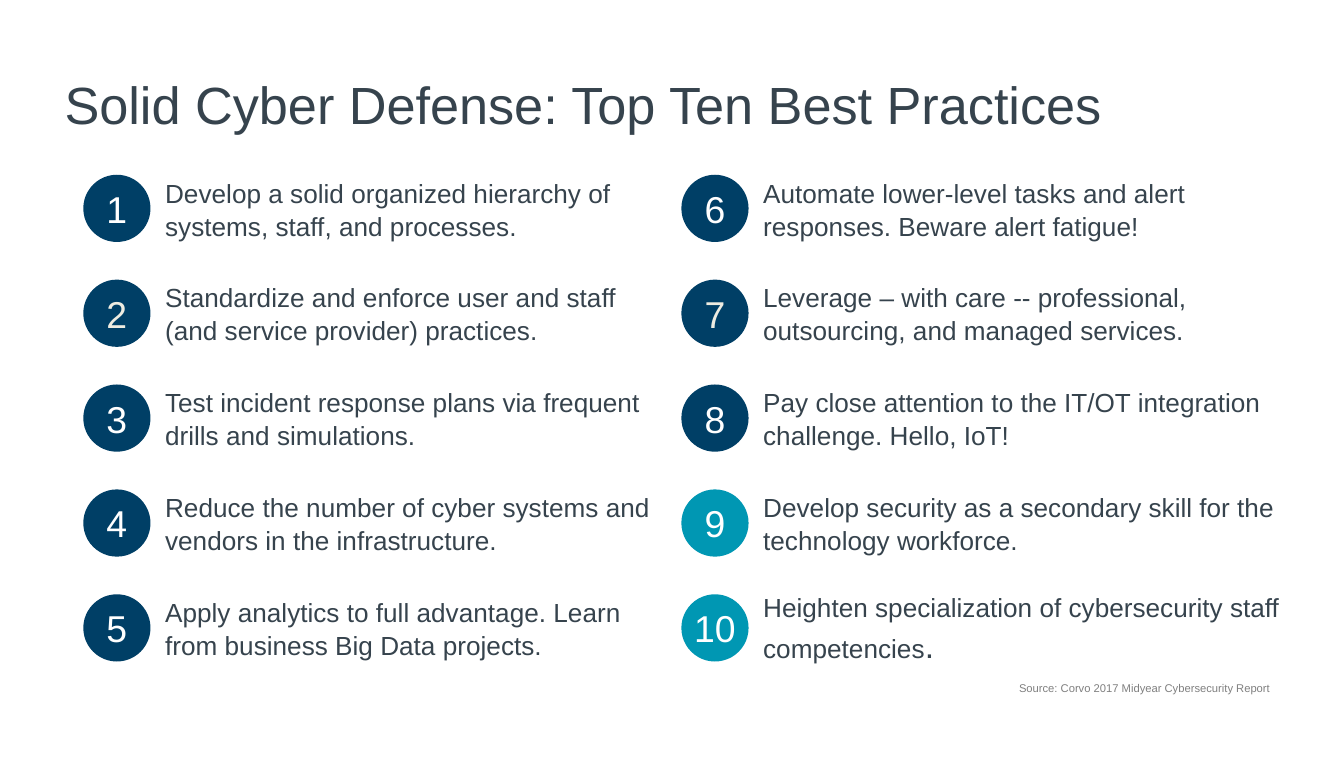
from pptx import Presentation
from pptx.dml.color import RGBColor
from pptx.enum import shapes, text
from pptx.util import Inches, Pt

# Content
TITLE = "Solid Cyber Defense: Top Ten Best Practices"
SOURCE = "Source: Corvo 2017 Midyear Cybersecurity Report "
PRACTICES = [
    "Develop a solid organized hierarchy of systems, staff, and processes.",
    "Standardize and enforce user and staff (and service provider) practices.",
    "Test incident response plans via frequent drills and simulations.",
    "Reduce the number of cyber systems and vendors in the infrastructure.",
    "Apply analytics to full advantage. Learn from business Big Data projects.",
    "Automate lower-level tasks and alert responses. Beware alert fatigue!",
    "Leverage – with care -- professional, outsourcing, and managed services.",
    "Pay close attention to the IT/OT integration challenge. Hello, IoT!",
    "Develop security as a secondary skill for the technology workforce.",
    "Heighten specialization of cybersecurity staff competencies",
]
LARGE_STOP = "."  # closes the last practice in a larger size

# Format
INK, NAVY, TEAL = "36434D", "003F66", "0097B3"
WHITE, CREAM, GREY = "FFFFFF", "EEECE1", "808080"
ROWS = 5
COLUMNS = [(0.62, 3.95), (5.07, 4.12)]  # circle left, text width
FIRST_TOP, ROW_STEP, CIRCLE = 1.3, 0.78, 0.5
MIDDLE, LEFT = text.MSO_ANCHOR.MIDDLE, text.PP_ALIGN.LEFT


def color(hex_string):
    return RGBColor.from_string(hex_string)


def apply(target, values):
    for name, value in values.items():
        setattr(target, name, value)


def add_span(para, words, size, hex_string):
    span = para.add_run()
    span.text = words
    apply(span.font, {"name": "Arial", "size": Pt(size)})
    span.font.color.rgb = color(hex_string)


def write(shape, words, size, hex_string, align=LEFT, anchor=MIDDLE, **frame_values):
    frame = shape.text_frame
    apply(frame, {"word_wrap": True, "vertical_anchor": anchor, **frame_values})
    para = frame.paragraphs[0]
    para.alignment = align
    add_span(para, words, size, hex_string)
    return para


def add_box(page, left, top, width, height):
    return page.shapes.add_textbox(*map(Inches, (left, top, width, height)))


def add_circle(page, number, left, top):
    circle = page.shapes.add_shape(
        shapes.MSO_SHAPE.OVAL, *map(Inches, (left, top, CIRCLE, CIRCLE)))
    circle.shadow.inherit = False
    circle.fill.solid()
    circle.fill.fore_color.rgb = color(TEAL if number > 8 else NAVY)
    circle.line.fill.background()
    write(circle, str(number), 20, CREAM if number in (2, 7) else WHITE,
          text.PP_ALIGN.CENTER, margin_left=0, margin_right=0,
          margin_top=0, margin_bottom=0)


def add_practice(page, number, words, left, top, width):
    last = number == len(PRACTICES)
    height = 0.64 if last else 0.57
    box = add_box(page, left, top + (CIRCLE - height) / 2, width, height)
    para = write(box, words, 14, INK)
    apply(para, {"space_before": Pt(6), "line_spacing": 1.05})
    para._p.get_or_add_pPr().set("marL", str(Inches(0.01)))
    if last:
        add_span(para, LARGE_STOP, 18, INK)


def main():
    deck = Presentation()
    apply(deck, {"slide_width": Inches(10), "slide_height": Inches(5.63)})
    page = deck.slides.add_slide(deck.slide_layouts[5])

    # Title
    title = page.shapes.title
    apply(title, {"left": Inches(0.48), "top": Inches(0.37),
                  "width": Inches(9.13), "height": Inches(0.8)})
    write(title, TITLE, 28, INK, margin_left=0, auto_size=text.MSO_AUTO_SIZE.NONE)

    # Numbered practices, filled column by column
    for index, words in enumerate(PRACTICES):
        column, row = divmod(index, ROWS)
        left, width = COLUMNS[column]
        top = FIRST_TOP + row * ROW_STEP
        add_circle(page, index + 1, left, top)
        add_practice(page, index + 1, words, left + CIRCLE, top, width)

    # Source line
    source = add_box(page, 5.57, 5.02, 4, 0.2)
    write(source, SOURCE, 6, GREY, text.PP_ALIGN.RIGHT, text.MSO_ANCHOR.TOP)

    deck.save("out.pptx")


if __name__ == "__main__":
    main()
